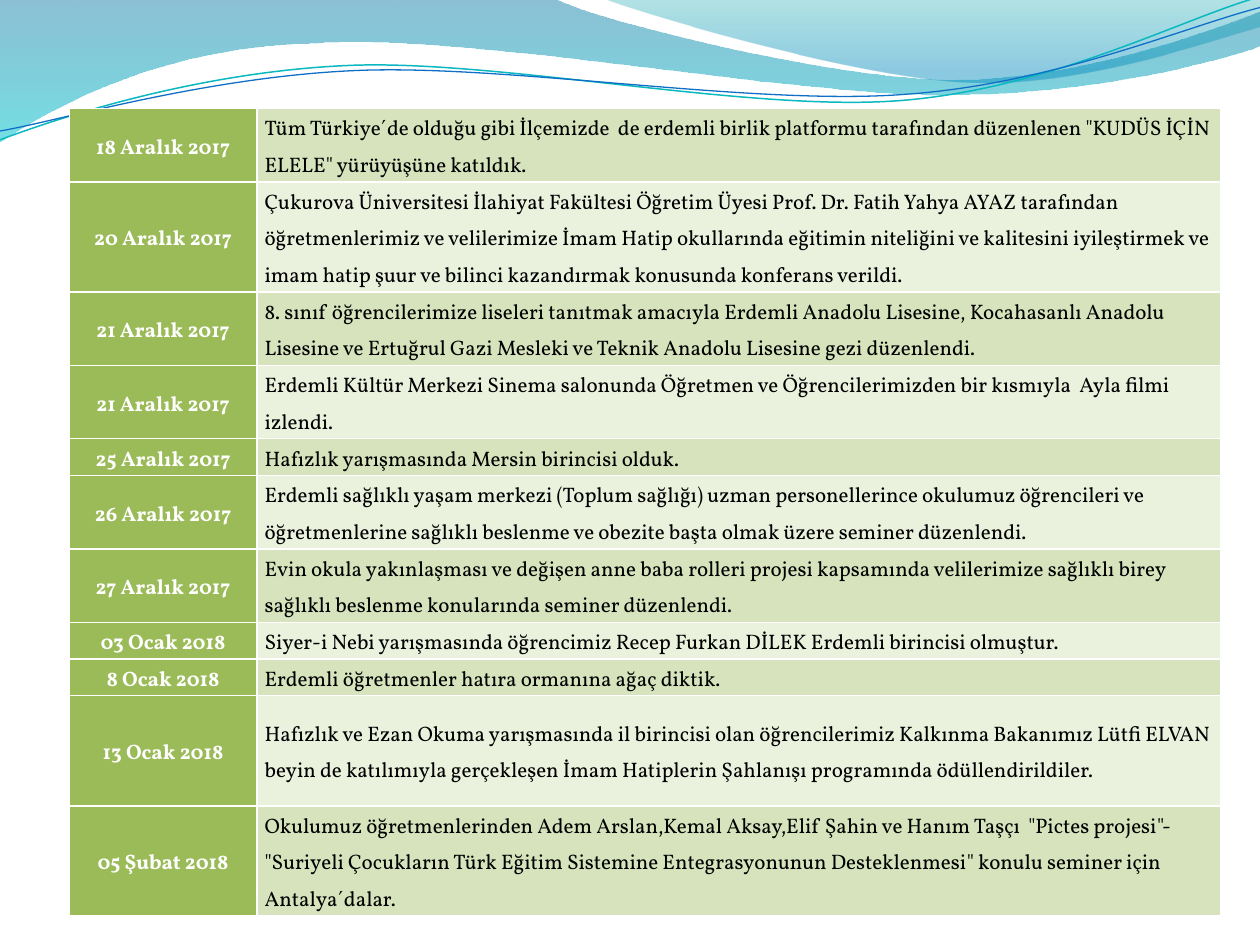
from lxml.etree import SubElement
from pptx import Presentation
from pptx.dml.color import RGBColor
from pptx.enum.text import MSO_ANCHOR, PP_ALIGN
from pptx.oxml import parse_xml
from pptx.oxml.ns import nsdecls, qn
from pptx.util import Inches, Pt

FONT = "Vollkorn"
COLORS = {
    "date": "9BBB59", "odd": "D6E3BC", "even": "EAF1DD", "white": "FFFFFF", "black": "000000",
    "teal line": "0AB8BF", "blue line": "0F6FC6",
    "deep blue": "0074A1", "turquoise": "00C6CF", "teal": "00A1A9", "blue": "008BBF",
}

# date, activity, row height in text lines
ACTIVITIES = [
    ("18 Aralık 2017", "Tüm Türkiye´de olduğu gibi İlçemizde  de erdemli birlik platformu tarafından düzenlenen \"KUDÜS İÇİN ELELE\" yürüyüşüne katıldık.", 2),
    ("20 Aralık 2017", "Çukurova Üniversitesi İlahiyat Fakültesi Öğretim Üyesi Prof. Dr. Fatih Yahya AYAZ tarafından öğretmenlerimiz ve velilerimize İmam Hatip okullarında eğitimin niteliğini ve kalitesini iyileştirmek ve imam hatip şuur ve bilinci kazandırmak konusunda konferans verildi.", 3),
    ("21 Aralık 2017", "8. sınıf öğrencilerimize liseleri tanıtmak amacıyla Erdemli Anadolu Lisesine, Kocahasanlı Anadolu Lisesine ve Ertuğrul Gazi Mesleki ve Teknik Anadolu Lisesine gezi düzenlendi.", 2),
    ("21 Aralık 2017", "Erdemli Kültür Merkezi Sinema salonunda Öğretmen ve Öğrencilerimizden bir kısmıyla  Ayla filmi izlendi.", 2),
    ("25 Aralık 2017", "Hafızlık yarışmasında Mersin birincisi olduk.", 1),
    ("26 Aralık 2017", "Erdemli sağlıklı yaşam merkezi (Toplum sağlığı) uzman personellerince okulumuz öğrencileri ve öğretmenlerine sağlıklı beslenme ve obezite başta olmak üzere seminer düzenlendi.", 2),
    ("27 Aralık 2017", "Evin okula yakınlaşması ve değişen anne baba rolleri projesi kapsamında velilerimize sağlıklı birey sağlıklı beslenme konularında seminer düzenlendi.", 2),
    ("03 Ocak 2018", "Siyer-i Nebi yarışmasında öğrencimiz Recep Furkan DİLEK Erdemli birincisi olmuştur.", 1),
    ("8 Ocak 2018", "Erdemli öğretmenler hatıra ormanına ağaç diktik.", 1),
    ("13 Ocak 2018", "Hafızlık ve Ezan Okuma yarışmasında il birincisi olan öğrencilerimiz Kalkınma Bakanımız Lütfi ELVAN beyin de katılımıyla gerçekleşen İmam Hatiplerin Şahlanışı programında ödüllendirildiler.", 3),
    ("05 Şubat 2018", "Okulumuz öğretmenlerinden Adem Arslan,Kemal Aksay,Elif Şahin ve Hanım Taşçı  \"Pictes projesi\"- \"Suriyeli Çocukların Türk Eğitim Sistemine Entegrasyonunun Desteklenmesi\" konulu seminer için Antalya´dalar.", 3),
]
TABLE_LEFT, TABLE_TOP, TABLE_HEIGHT = 0.55, 0.86, 6.41
COLUMN_WIDTHS = (1.49, 7.65)

# Each outline: first point, then segments of one point (line) or three points (Bézier curve)
BANDS = [
    ((0, 0), [
        [(4.4, -0.01)],
        [(4.76, 0.17), (6.64, 0.63), (7.58, 0.63)],
        [(8.53, 0.63), (9.58, 0.26), (10, 0.09)],
        [(10.01, 0.36)],
        [(9.83, 0.44), (8.7, 0.76), (7.46, 0.75)],
        [(6.22, 0.75), (3.82, 0.28), (2.57, 0.34)],
        [(1.29, 0.36), (0.46, 0.83), (-0.01, 1.13)],
    ], [(0, "deep blue", 45), (100, "turquoise", 55)]),
    ((4.79, -0.01), [
        [(5.09, 0.11), (6.82, 0.62), (7.69, 0.65)],
        [(8.56, 0.69), (9.61, 0.32), (10, 0.21)],
        [(10, 0)],
    ], [(0, "teal", 30), (80, "blue", 45)]),
]
WAVE_LINES = [
    ((0, 1.11), [
        [(0.48, 0.93), (1.58, 0.57), (2.77, 0.52)],
        [(3.95, 0.47), (5.93, 0.89), (7.13, 0.8)],
        [(8.33, 0.71), (9.38, 0.15), (9.98, -0.02)],
    ], "teal line", 0.85),
    ((0, 1.04), [
        [(0.47, 0.96), (1.64, 0.61), (2.83, 0.56)],
        [(4.03, 0.51), (5.97, 0.84), (7.17, 0.75)],
        [(8.36, 0.67), (9.41, 0.21), (10, 0.06)],
    ], "blue line", 0.75),
]


def color(name):
    return RGBColor.from_string(COLORS[name])


def add_outline(slide, start, segments, close):
    """Build a freeform through all points, then turn each three-point segment into a curve."""
    points = [(Inches(x), Inches(y)) for segment in segments for x, y in segment]
    builder = slide.shapes.build_freeform(Inches(start[0]), Inches(start[1]))
    builder.add_line_segments(points, close=close)
    shape = builder.convert_to_shape()
    shape.shadow.inherit = False
    steps = iter(list(shape.element.iter(qn("a:lnTo"))))
    for segment in segments:
        segment_steps = [next(steps) for _ in segment]
        if len(segment) == 3:
            curve = parse_xml(f'<a:cubicBezTo {nsdecls("a")}/>')
            segment_steps[0].addprevious(curve)
            for step in segment_steps:
                curve.append(step[0])
                step.getparent().remove(step)
    return shape


def add_band(slide, start, segments, stops):
    shape = add_outline(slide, start, segments, close=True)
    shape.line.fill.background()
    shape.fill.gradient()
    shape.fill.gradient_angle = 270
    for stop, (position, name, _) in zip(shape.fill.gradient_stops, stops):
        stop.position = position / 100
        stop.color.rgb = color(name)
    elements = shape.element.spPr.iter(qn("a:srgbClr"))
    for element, (_, _, opacity) in zip(elements, stops):
        SubElement(element, qn("a:alpha"), val=str(opacity * 1000))


def add_wave_line(slide, start, segments, name, width):
    shape = add_outline(slide, start, segments, close=False)
    shape.fill.background()
    shape.line.color.rgb = color(name)
    shape.line.width = Pt(width)


def format_cell(cell, text, fill, text_color, bold, alignment, borders):
    cell.vertical_anchor = MSO_ANCHOR.MIDDLE
    cell.margin_left = cell.margin_right = Inches(0.06)
    cell.margin_top = cell.margin_bottom = 0
    properties = cell._tc.get_or_add_tcPr()
    for side in borders:
        properties.append(parse_xml(
            f'<a:{side} {nsdecls("a")} w="{Pt(1)}"><a:solidFill>'
            f'<a:srgbClr val="{COLORS["white"]}"/></a:solidFill></a:{side}>'))
    cell.fill.solid()
    cell.fill.fore_color.rgb = color(fill)
    cell.text_frame.text = text
    paragraph = cell.text_frame.paragraphs[0]
    paragraph.alignment = alignment
    paragraph.line_spacing = 1.25
    font = paragraph.runs[0].font
    font.name, font.size, font.bold = FONT, Pt(12), bold
    font.color.rgb = color(text_color)


def add_activity_table(slide):
    table = slide.shapes.add_table(
        len(ACTIVITIES), 2, Inches(TABLE_LEFT), Inches(TABLE_TOP),
        Inches(sum(COLUMN_WIDTHS)), Inches(TABLE_HEIGHT)).table
    table.first_row = table.horz_banding = False
    for column, width in zip(table.columns, COLUMN_WIDTHS):
        column.width = Inches(width)
    line_height = TABLE_HEIGHT / sum(lines for _, _, lines in ACTIVITIES)
    for index, (date, activity, lines) in enumerate(ACTIVITIES):
        table.rows[index].height = Inches(lines * line_height)
        borders = ["lnL", "lnR"]
        if index > 0:
            borders.append("lnT")
        if index < len(ACTIVITIES) - 1:
            borders.append("lnB")
        format_cell(table.cell(index, 0), date, "date", "white", True,
                    PP_ALIGN.CENTER, borders)
        format_cell(table.cell(index, 1), activity, "even" if index % 2 else "odd",
                    "black", False, PP_ALIGN.LEFT, borders)


def main():
    presentation = Presentation()
    presentation.slide_width, presentation.slide_height = Inches(10), Inches(7.5)
    slide = presentation.slides.add_slide(presentation.slide_layouts[6])
    for band in BANDS:
        add_band(slide, *band)
    for wave_line in WAVE_LINES:
        add_wave_line(slide, *wave_line)
    add_activity_table(slide)
    presentation.save("out.pptx")


if __name__ == "__main__":
    main()
